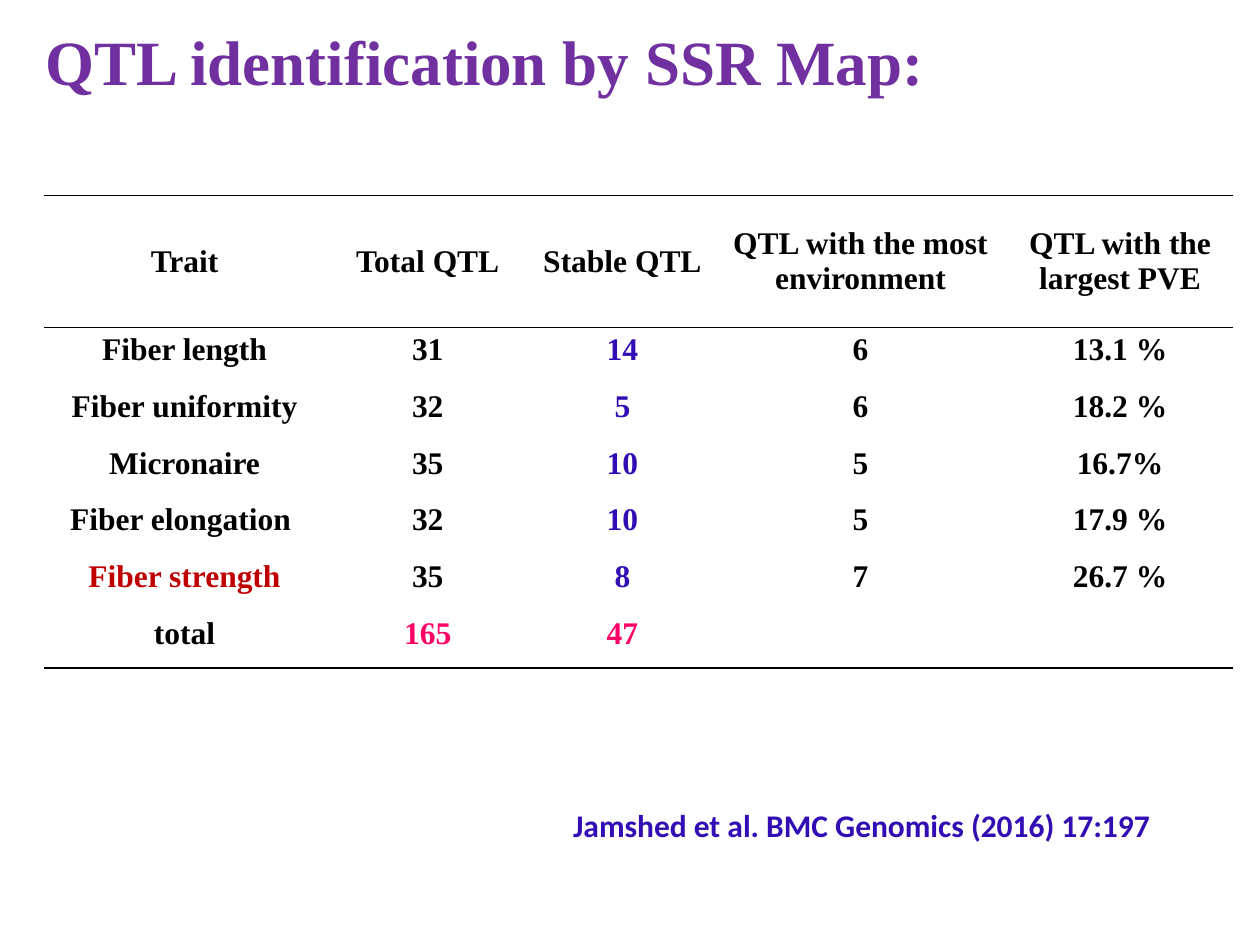
from dataclasses import dataclass

from pptx import Presentation
from pptx.dml.color import RGBColor
from pptx.enum.text import MSO_ANCHOR, MSO_AUTO_SIZE, PP_ALIGN
from pptx.oxml import parse_xml
from pptx.oxml.ns import nsdecls, qn
from pptx.util import Inches, Pt


@dataclass(frozen=True)
class Theme:
    serif: str = "Times New Roman"
    sans: str = "Calibri"
    title_size: int = 36
    body_size: int = 18
    rule_width: int = 1
    white: str = "FFFFFF"
    black: str = "000000"
    purple: str = "7030A0"
    blue: str = "310DB3"
    red: str = "C00000"
    pink: str = "FF0066"
    plain_table: str = "{2D5ABB26-0587-4C30-8999-92F81FD0307C}"


@dataclass(frozen=True)
class Label:
    text: str
    left: float
    top: float
    width: float
    height: float
    font: str
    size: int
    color: str
    wrap: bool


THEME = Theme()

LABELS = [
    Label("QTL identification by SSR Map:", 0.26, 0.13, 7.65, 0.71,
          THEME.serif, THEME.title_size, THEME.purple, True),
    Label("Jamshed et al. BMC Genomics (2016) 17:197", 4.45, 6.35, 4.83, 0.4,
          THEME.sans, THEME.body_size, THEME.blue, False),
]

COL_WIDTHS = [2.23, 1.63, 1.46, 2.32, 1.8]
HEADER_HEIGHT = 1.05
ROW_HEIGHT = 0.45
STABLE_COL = 2

ROWS = [
    ["Trait", "Total QTL", "Stable QTL", "QTL with the most environment",
     "QTL with the largest PVE"],
    ["Fiber length", "31", "14", "6", "13.1 %"],
    ["Fiber uniformity", "32", "5", "6", "18.2 %"],
    ["Micronaire", "35", "10", "5", "16.7%"],
    ["Fiber elongation ", "32", "10", "5", "17.9 %"],
    ["Fiber strength", "35", "8", "7", "26.7 %"],
    ["total", "165", "47", "", ""],
]
LAST_ROW = len(ROWS) - 1


def add_run(p, text: str, font: str, size: int, color: str) -> None:
    r = p.add_run()
    r.text = text
    r.font.name = font
    r.font.size = Pt(size)
    r.font.bold = True
    r.font.color.rgb = RGBColor.from_string(color)


def add_label(s, label: Label) -> None:
    sp = s.shapes.add_textbox(Inches(label.left), Inches(label.top),
                              Inches(label.width), Inches(label.height))
    tf = sp.text_frame
    tf.word_wrap = label.wrap
    tf.auto_size = MSO_AUTO_SIZE.SHAPE_TO_FIT_TEXT
    add_run(tf.paragraphs[0], label.text, label.font, label.size, label.color)


def cell_color(row: int, col: int) -> str:
    if row == LAST_ROW and col > 0:
        return THEME.pink
    if row > 0 and col == STABLE_COL:
        return THEME.blue
    if ROWS[row][col] == "Fiber strength":
        return THEME.red
    return THEME.black


def add_rule(cell, side: str) -> None:
    cell._tc.get_or_add_tcPr().append(parse_xml(
        f'<a:{side} {nsdecls("a")} w="{Pt(THEME.rule_width)}"><a:solidFill>'
        f'<a:srgbClr val="{THEME.black}"/></a:solidFill></a:{side}>'))


def fill_cell(cell, row: int, col: int) -> None:
    if row == 0:
        add_rule(cell, "lnT")
        cell.vertical_anchor = MSO_ANCHOR.MIDDLE
    if row in (0, LAST_ROW):
        add_rule(cell, "lnB")
    cell.fill.solid()
    cell.fill.fore_color.rgb = RGBColor.from_string(THEME.white)
    cell.margin_top = cell.margin_bottom = Inches(0.04)
    p = cell.text_frame.paragraphs[0]
    p.alignment = PP_ALIGN.CENTER
    if ROWS[row][col]:
        add_run(p, ROWS[row][col], THEME.serif, THEME.body_size,
                cell_color(row, col))


def add_qtl_table(s) -> None:
    height = HEADER_HEIGHT + LAST_ROW * ROW_HEIGHT
    table = s.shapes.add_table(len(ROWS), len(COL_WIDTHS), Inches(0.35),
                               Inches(1.55), Inches(sum(COL_WIDTHS)),
                               Inches(height)).table
    table.first_row = table.horz_banding = False
    table._tbl.tblPr.find(qn("a:tableStyleId")).text = THEME.plain_table
    for column, width in zip(table.columns, COL_WIDTHS):
        column.width = Inches(width)
    for row, line in enumerate(table.rows):
        line.height = Inches(ROW_HEIGHT if row else HEADER_HEIGHT)
        for col, cell in enumerate(line.cells):
            fill_cell(cell, row, col)


def main() -> None:
    prs = Presentation()
    prs.slide_width = Inches(10)
    prs.slide_height = Inches(7.5)
    s = prs.slides.add_slide(prs.slide_layouts[6])
    add_qtl_table(s)
    for label in LABELS:
        add_label(s, label)
    prs.save("out.pptx")


if __name__ == "__main__":
    main()
